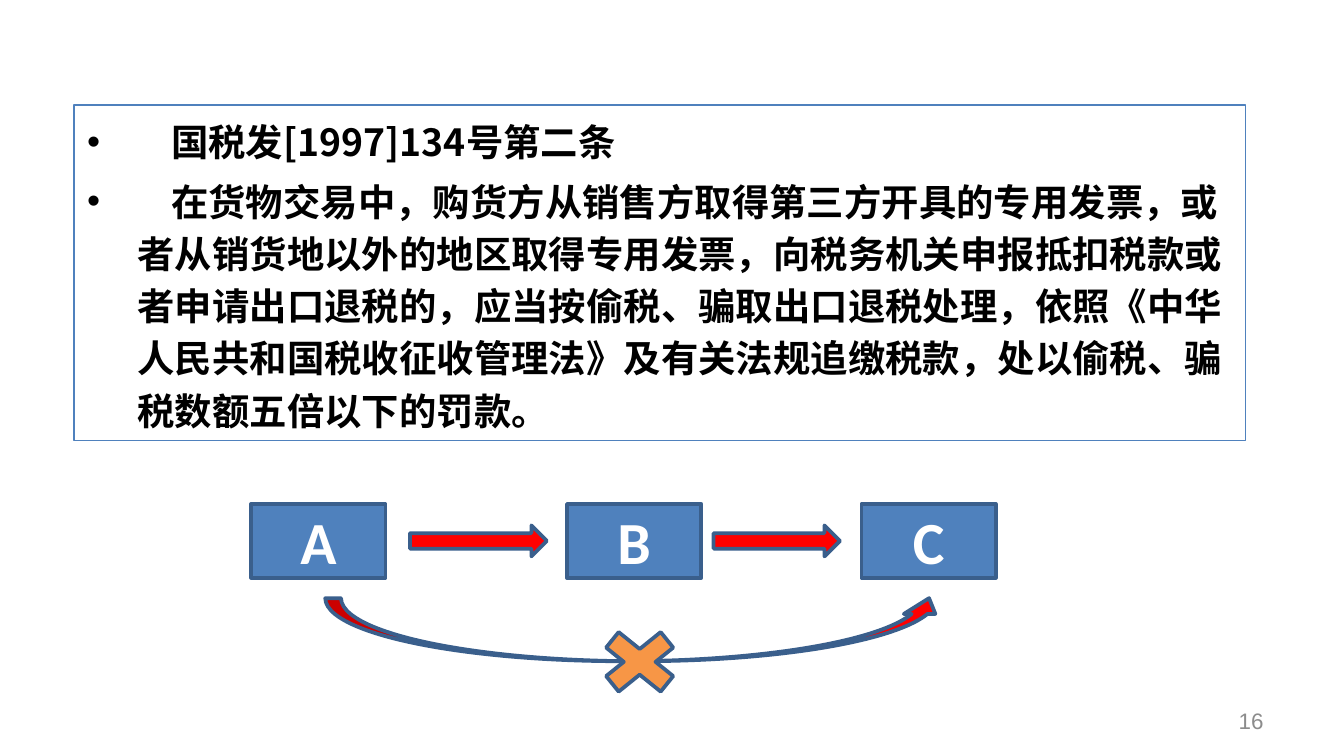
from lxml.etree import SubElement
from pptx import Presentation
from pptx.dml.color import RGBColor
from pptx.enum.shapes import MSO_SHAPE
from pptx.enum.text import MSO_ANCHOR, PP_ALIGN
from pptx.oxml.ns import qn
from pptx.util import Pt

COLORS = {
    "blue": "4F81BD",
    "outline": "3A5F8C",
    "red": "FF0000",
    "orange": "F79646",
    "black": "000000",
    "white": "FFFFFF",
    "gray": "8C8C8C",
}
CJK_FONT = "Noto Sans CJK SC"
HANGING = 27
FIRST_LINE = 45

CLAUSES = [
    "国税发[1997]134号第二条",
    "在货物交易中，购货方从销售方取得第三方开具的专用发票，或者从销货地以外的地区取得专用发票，"
    "向税务机关申报抵扣税款或者申请出口退税的，应当按偷税、骗取出口退税处理，"
    "依照《中华人民共和国税收征收管理法》及有关法规追缴税款，处以偷税、骗税数额五倍以下的罚款。",
]
PARTIES = [("A", 134.6), ("B", 303.8), ("C", 461.5)]
PARTY_TOP, PARTY_WIDTH, PARTY_HEIGHT = 270, 72, 39.6
FLOWS = [(219.6, 73.4), (382.3, 67.7)]
FLOW_HEIGHT = 16.6


def color(name):
    return RGBColor.from_string(COLORS[name])


def add_run(paragraph, text, size, font, ink, bold=False):
    run = paragraph.add_run()
    run.text = text
    run.font.size = Pt(size)
    run.font.name = font
    run.font.bold = bold
    run.font.color.rgb = color(ink)
    SubElement(run.font._element, qn("a:ea"), typeface=font)


def add_bullet(paragraph):
    """Hang the bullet and set a tab stop for the deeper first line."""
    props = paragraph._p.get_or_add_pPr()
    props.set("marL", str(Pt(HANGING)))
    props.set("indent", str(-Pt(HANGING)))
    SubElement(props, qn("a:buFont"), typeface="Arial")
    SubElement(props, qn("a:buChar"), char="•")
    tabs = SubElement(props, qn("a:tabLst"))
    SubElement(tabs, qn("a:tab"), pos=str(Pt(FIRST_LINE)), algn="l")


def add_clauses(slide):
    box = slide.shapes.add_textbox(Pt(39.6), Pt(56.2), Pt(627.8), Pt(180))
    box.line.color.rgb = color("blue")
    box.line.width = Pt(0.75)
    frame = box.text_frame
    frame.word_wrap = True
    for index, clause in enumerate(CLAUSES):
        paragraph = frame.add_paragraph() if index else frame.paragraphs[0]
        add_bullet(paragraph)
        paragraph.line_spacing = Pt(28)
        if index:
            paragraph.space_before = Pt(4)
        add_run(paragraph, "\t" + clause, 20, CJK_FONT, "black", bold=True)


def add_figure(slide, preset, left, top, width, height, fill):
    figure = slide.shapes.add_shape(preset, Pt(left), Pt(top), Pt(width), Pt(height))
    figure.shadow.inherit = False
    figure.fill.solid()
    figure.fill.fore_color.rgb = color(fill)
    figure.line.color.rgb = color("outline")
    figure.line.width = Pt(2)
    return figure


def add_party(slide, letter, left):
    party = add_figure(slide, MSO_SHAPE.RECTANGLE, left, PARTY_TOP,
                       PARTY_WIDTH, PARTY_HEIGHT, "blue")
    party.text_frame.vertical_anchor = MSO_ANCHOR.MIDDLE
    paragraph = party.text_frame.paragraphs[0]
    paragraph.alignment = PP_ALIGN.CENTER
    add_run(paragraph, letter, 32, "Calibri", "white", bold=True)


def add_page_number(slide, number):
    box = slide.shapes.add_textbox(Pt(516.2), Pt(375.1), Pt(167.8), Pt(21.6))
    box.text_frame.word_wrap = True
    box.text_frame.vertical_anchor = MSO_ANCHOR.MIDDLE
    paragraph = box.text_frame.paragraphs[0]
    paragraph.alignment = PP_ALIGN.RIGHT
    add_run(paragraph, number, 12, "Arial", "gray")


def main():
    deck = Presentation()
    deck.slide_width, deck.slide_height = Pt(720), Pt(405)
    slide = deck.slides.add_slide(deck.slide_layouts[6])

    add_clauses(slide)
    for letter, left in PARTIES:
        add_party(slide, letter, left)
    flow_top = PARTY_TOP + (PARTY_HEIGHT - FLOW_HEIGHT) / 2
    for left, width in FLOWS:
        add_figure(slide, MSO_SHAPE.RIGHT_ARROW, left, flow_top,
                   width, FLOW_HEIGHT, "red")
    bypass = add_figure(slide, MSO_SHAPE.CURVED_RIGHT_ARROW,
                        323.3, 171.4, 33.8, 331.9, "red")
    bypass.rotation = 270
    add_figure(slide, MSO_SHAPE.MATH_MULTIPLY, 314.6, 331.9, 56.2, 45.4, "orange")
    add_page_number(slide, "16")

    deck.save("out.pptx")


if __name__ == "__main__":
    main()
